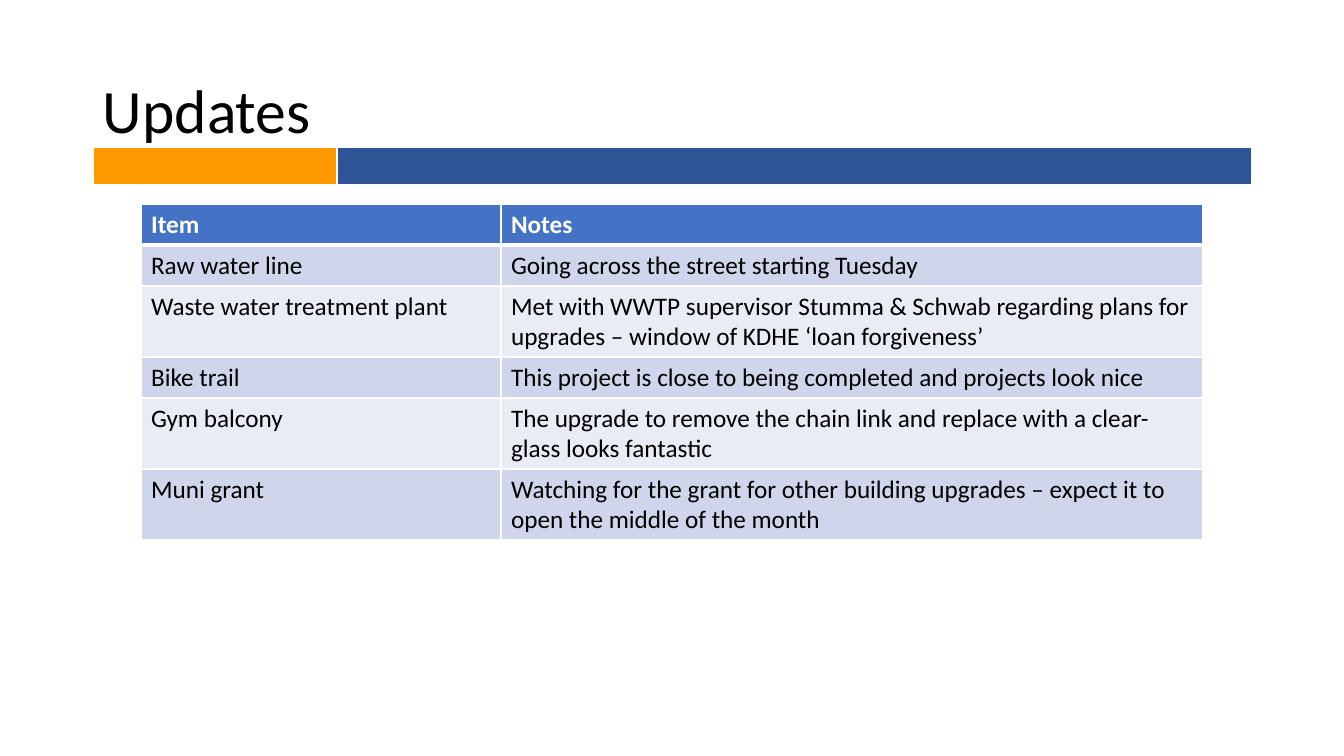
from lxml.etree import SubElement
from pptx import Presentation
from pptx.dml.color import RGBColor as RGB
from pptx.enum.text import MSO_ANCHOR as Anchor
from pptx.oxml.ns import qn
from pptx.util import Pt

PX = 914400 / 100.8
FONT = "Calibri"
COLORS = {"ink": "000000", "white": "FFFFFF", "gold": "FF9900", "navy": "2F5597",
          "head": "4472C4", "dark": "CFD5EA", "light": "E9EBF5"}
ROWS = [
    ("Item", "Notes"),
    ("Raw water line", "Going across the street starting Tuesday"),
    ("Waste water treatment plant",
     "Met with WWTP supervisor Stumma & Schwab regarding plans for upgrades "
     "– window of KDHE ‘loan forgiveness’"),
    ("Bike trail", "This project is close to being completed and projects look nice"),
    ("Gym balcony",
     "The upgrade to remove the chain link and replace with a clear-glass looks fantastic"),
    ("Muni grant",
     "Watching for the grant for other building upgrades – expect it to open "
     "the middle of the month"),
]
HEIGHTS = [41, 41, 71, 41, 71, 71]


def px(n):
    return round(n * PX)


def style(para, size, color, bold=False):
    for run in para.runs:
        run.font.name, run.font.size, run.font.bold = FONT, Pt(size), bold
        run.font.color.rgb = RGB.from_string(COLORS[color])


def paint(cell, color, base=1):
    """Fill a cell and give it white borders, the lower one of width base."""
    props = cell._tc.get_or_add_tcPr()
    for side, width in zip("LRTB", (1, 1, 1, base)):
        line = SubElement(props, qn(f"a:ln{side}"), w=str(Pt(width)))
        SubElement(SubElement(line, qn("a:solidFill")), qn("a:srgbClr"),
                   val=COLORS["white"])
    cell.fill.solid()
    cell.fill.fore_color.rgb = RGB.from_string(COLORS[color])


def add_grid(slide, x, y, widths, heights):
    frame = slide.shapes.add_table(len(heights), len(widths), px(x), px(y),
                                   px(sum(widths)), px(sum(heights)))
    grid = frame.table
    for col, width in zip(grid.columns, widths):
        col.width = px(width)
    for row, height in zip(grid.rows, heights):
        row.height = px(height)
    return grid


def add_title(slide, x, y, w, h):
    box = slide.shapes.add_textbox(px(x), px(y), px(w), px(h))
    frame = box.text_frame
    frame.word_wrap = True
    frame.vertical_anchor = Anchor.MIDDLE
    frame.text = "Updates"
    para = frame.paragraphs[0]
    para.line_spacing = 0.9
    style(para, 44, "ink")


def add_strip(slide, x, y, w, h):
    gold = 244
    grid = add_grid(slide, x, y, [gold, w - gold], [h])
    for cell, color in zip(grid.rows[0].cells, ("gold", "navy")):
        cell.margin_top = cell.margin_bottom = 0
        paint(cell, color, 3)


def add_items(slide, x, y, w):
    first = 360
    grid = add_grid(slide, x, y, [first, w - first], HEIGHTS)
    for i, texts in enumerate(ROWS):
        head = i == 0
        fill = "head" if head else "dark" if i % 2 else "light"
        for cell, text in zip(grid.rows[i].cells, texts):
            cell.text = text
            style(cell.text_frame.paragraphs[0], 18, "white" if head else "ink", head)
            paint(cell, fill, 3 if head else 1)


def main():
    deck = Presentation()
    deck.slide_width, deck.slide_height = px(1344), px(756)
    slide = deck.slides.add_slide(deck.slide_layouts[6])
    add_title(slide, 93, 41, 1159, 146)
    add_strip(slide, 93, 147, 1159, 39)
    add_items(slide, 141, 204, 1062)
    deck.save("out.pptx")


if __name__ == "__main__":
    main()
